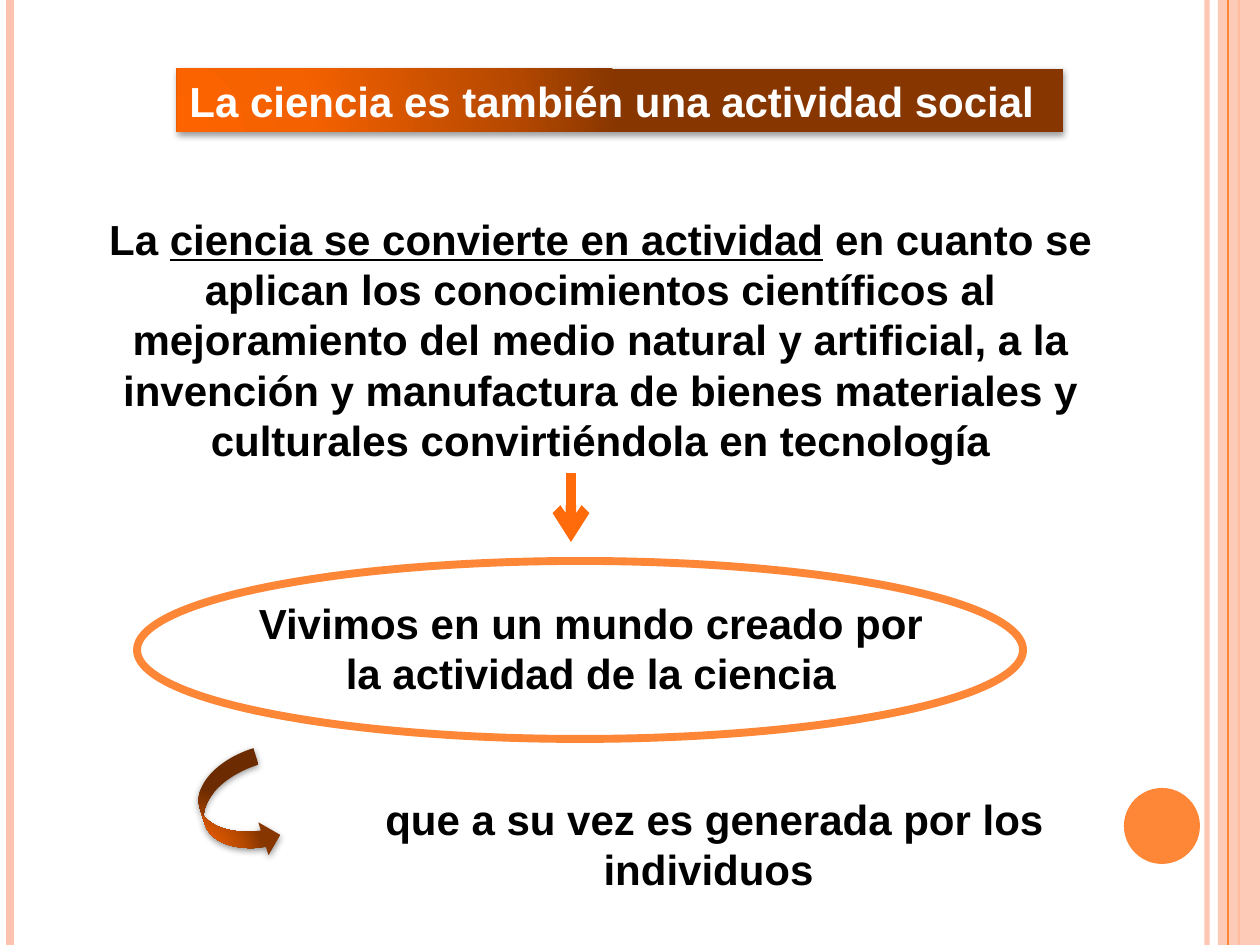
from lxml import etree
from pptx import Presentation
from pptx import util as u
from pptx.dml.color import RGBColor
from pptx.enum import shapes, text
from pptx.oxml import ns, parse_xml

SCALE = 914400 / 126
ORANGE = RGBColor(0xFE, 0x86, 0x37)
PEACH = RGBColor(0xFE, 0xC3, 0xAE)
ARROW = RGBColor(0xFF, 0x6B, 0x0A)
WHITE = RGBColor(0xFF, 0xFF, 0xFF)
BLACK = RGBColor(0, 0, 0)
EMBER = ((0, "FD6400"), (30, "F46100"), (75, "B74900"), (100, "873600"))


def px(length):
    """Turn pixels into EMU."""
    return u.Emu(round(length * SCALE))


def set_alpha(fill_element, percent):
    """Make the colour of a solid fill partly transparent."""
    color = fill_element.find(".//" + ns.qn("a:srgbClr"))
    etree.SubElement(color, ns.qn("a:alpha"), val=str(percent * 1000))


def add_line(page, start, end, color, width):
    """Draw a straight line without shadow."""
    line = page.shapes.add_connector(
        shapes.MSO_CONNECTOR.STRAIGHT, *map(px, start + end))
    line.line.color.rgb = color
    line.line.width = u.Pt(width)
    etree.SubElement(line._element.spPr, ns.qn("a:effectLst"))
    return line


def add_shape(page, kind, box, fill=None):
    """Draw a flat preset shape without outline."""
    shape = page.shapes.add_shape(kind, *map(px, box))
    shape.shadow.inherit = False
    shape.line.fill.background()
    if fill is not None:
        shape.fill.solid()
        shape.fill.fore_color.rgb = fill
    return shape


def add_ember_shape(page, kind, box):
    """Draw a shape with the circular orange gradient and a soft shadow."""
    shape = add_shape(page, kind, box)
    shape.fill.background()
    properties = shape._element.spPr
    stops = "".join(
        f'<a:gs pos="{position * 1000}"><a:srgbClr val="{color}"/></a:gs>'
        for position, color in EMBER)
    gradient = parse_xml(
        f'<a:gradFill {ns.nsdecls("a")} rotWithShape="1"><a:gsLst>{stops}</a:gsLst>'
        '<a:path path="circle"><a:fillToRect l="5000" t="100000" r="120000" b="10000"/>'
        '</a:path></a:gradFill>')
    properties.replace(properties.find(ns.qn("a:noFill")), gradient)
    properties.find(ns.qn("a:effectLst")).append(parse_xml(
        f'<a:outerShdw {ns.nsdecls("a")} blurRad="50800" dist="20320" dir="5400000" '
        'rotWithShape="0"><a:srgbClr val="000000"><a:alpha val="42000"/></a:srgbClr>'
        '</a:outerShdw>'))
    return shape


def write(shape, runs, color, align):
    """Write one bold paragraph from (wording, underlined) runs."""
    frame = shape.text_frame
    frame.word_wrap = True
    frame.auto_size = text.MSO_AUTO_SIZE.SHAPE_TO_FIT_TEXT
    frame.vertical_anchor = text.MSO_ANCHOR.TOP
    para = frame.paragraphs[0]
    para.alignment = align
    for wording, underlined in runs:
        span = para.add_run()
        span.text = wording
        span.font.name = "Arial"
        span.font.size = u.Pt(24)
        span.font.bold = True
        span.font.underline = underlined
        span.font.color.rgb = color


def add_statement(page, box, *runs):
    """Place a centred black statement."""
    write(page.shapes.add_textbox(*map(px, box)), runs, BLACK, text.PP_ALIGN.CENTER)


def add_frame(page, box):
    """Draw the vertical bands at both edges and the round ornament."""
    left, top, width, height = box
    right, bottom = left + width, top + height

    def rule(x, color, weight):
        return add_line(page, (x, top), (x, bottom), color, weight)

    set_alpha(rule(right - 53, PEACH, 3).line._ln, 93)
    rule(left + 10, PEACH, 4.5)
    rule(right - 21, ORANGE, 1.5)
    band = add_shape(page, shapes.MSO_SHAPE.RECTANGLE, (right - 42, top, 42, height), PEACH)
    set_alpha(band._element.spPr, 87)
    rule(right - 32, ORANGE, 0.75)
    add_shape(page, shapes.MSO_SHAPE.OVAL, (right - 136, bottom - 157, 76, 76), ORANGE)


def add_title(page, box):
    """Place the title bar."""
    bar = add_ember_shape(page, shapes.MSO_SHAPE.RECTANGLE, box)
    write(bar, [("La ciencia es también una actividad social", False)],
          WHITE, text.PP_ALIGN.LEFT)


def add_conclusion(page, box):
    """Place the outlined ellipse, its statement and the arrow leading to it."""
    left, top, width, height = box
    ellipse = add_shape(page, shapes.MSO_SHAPE.OVAL, box, WHITE)
    ellipse.line.color.rgb = ORANGE
    ellipse.line.width = u.Pt(4.5)
    add_statement(page, (left + 90, top + 30, width - 158, 115),
                  ("Vivimos en un mundo creado por la actividad de la ciencia", False))
    x = left + 434
    arrow = add_line(page, (x, top - 88), (x, top - 19), ARROW, 6)
    etree.SubElement(arrow.line._ln, ns.qn("a:tailEnd"), type="arrow")


def add_consequence(page, box):
    """Place the curved arrow and the closing statement."""
    left, top, width, height = box
    curve = add_ember_shape(page, shapes.MSO_SHAPE.CURVED_RIGHT_ARROW,
                            (left, top, 69, height - 38))
    curve.rotation = 342.8
    add_statement(page, (left + 84, top + 31, width - 84, 115),
                  ("que a su vez es generada por los individuos ", False))


def main():
    """Build the slide and save it."""
    deck = Presentation()
    deck.slide_width, deck.slide_height = px(1260), px(945)
    page = deck.slides.add_slide(deck.slide_layouts[6])
    add_frame(page, (0, 0, 1260, 945))
    add_title(page, (177, 69, 886, 63))
    add_statement(
        page, (69, 207, 1063, 267),
        ("La ", False),
        ("ciencia se convierte en actividad", True),
        (" en cuanto se aplican los conocimientos científicos al mejoramiento del medio "
         "natural y artificial, a la invención y manufactura de bienes materiales y "
         "culturales convirtiéndola en tecnología", False))
    add_conclusion(page, (137, 561, 886, 178))
    add_consequence(page, (202, 756, 941, 146))
    deck.save("out.pptx")


if __name__ == "__main__":
    main()
